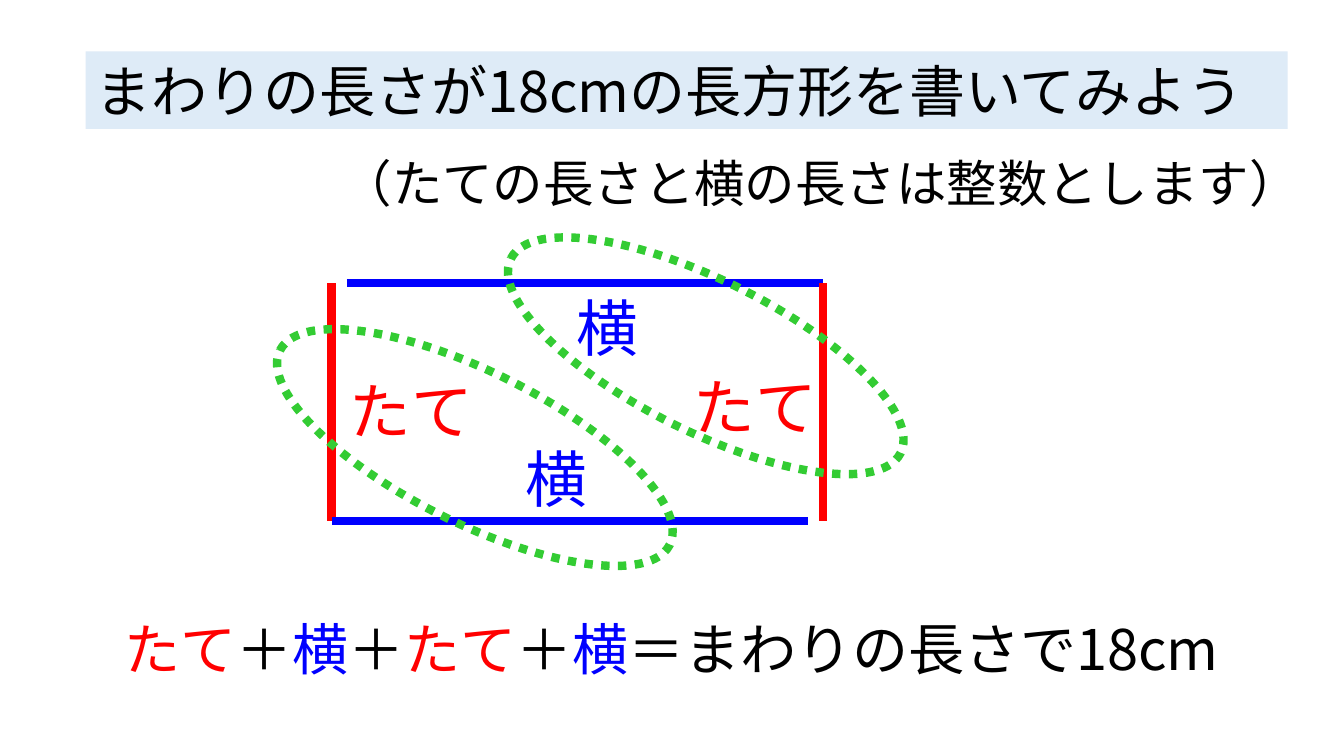
import pptx
import pptx.dml.color
import pptx.enum.dml
import pptx.enum.shapes
import pptx.enum.text
import pptx.oxml
import pptx.oxml.ns
import pptx.util
from pptx.util import Inches

THEME = {
    "font": "Noto Sans CJK JP",
    "text": "000000", "height": "FF0000", "width": "0000FF",
    "pair": "33CC33", "banner": "DEEBF7",
    "title": 40, "note": 36, "label": 44, "formula": 40, "stroke": 6,
}

# box (left, top, width, height), size, spans of (words, colour)
TITLE = ((0.85, 0.51, 11.92, 0.77), "title", [("まわりの長さが18cmの長方形を書いてみよう", "text")])
NOTE = ((3.29, 1.46, 9.79, 0.71), "note", [("（たての長さと横の長さは整数とします）", "text")])
FORMULA = ((1.14, 6.05, 11.33, 0.77), "formula", [
    ("たて", "height"), ("＋", "text"), ("横", "width"), ("＋", "text"),
    ("たて", "height"), ("＋", "text"), ("横", "width"),
    ("＝まわりの長さで18cm", "text"),
])
LABELS = [
    ((3.37, 3.65, 1.44, 0.84), "label", [("たて", "height")]),
    ((6.78, 3.61, 1.44, 0.84), "label", [("たて", "height")]),
    ((5.11, 4.33, 0.82, 0.84), "label", [("横", "width")]),
    ((5.62, 2.83, 0.82, 0.84), "label", [("横", "width")]),
]

# The horizontal sides each stop short of one corner
LEFT, TOP, RIGHT, BOTTOM, GAP = 3.29, 2.81, 8.16, 5.17, 0.15
SIDES = [
    ((LEFT, TOP), (LEFT, BOTTOM), "height"),
    ((LEFT, BOTTOM), (RIGHT - GAP, BOTTOM), "width"),
    ((LEFT + GAP, TOP), (RIGHT, TOP), "width"),
    ((RIGHT, TOP), (RIGHT, BOTTOM), "height"),
]
PAIR_CORNERS = [(4.84, 2.78), (2.55, 3.69)]
PAIR_SIZE = (4.32, 1.5)
PAIR_TILT = 26.5


def colour(name):
    return pptx.dml.color.RGBColor.from_string(THEME[name])


def apply(target, values):
    for name, value in values.items():
        setattr(target, name, value)


def add_text(page, place, size, spans, wrap=False):
    box = page.shapes.add_textbox(*map(Inches, place))
    apply(box.text_frame, {
        "word_wrap": wrap,
        "auto_size": pptx.enum.text.MSO_AUTO_SIZE.SHAPE_TO_FIT_TEXT,
    })
    para = box.text_frame.paragraphs[0]
    for words, tint in spans:
        span = para.add_run()
        span.text = words
        apply(span.font, {"size": pptx.util.Pt(THEME[size]), "name": THEME["font"]})
        span.font.color.rgb = colour(tint)
        east_asian = pptx.oxml.ns.qn("a:ea")
        latin = span.font._element.find(pptx.oxml.ns.qn("a:latin"))
        latin.addnext(latin.makeelement(east_asian, {"typeface": THEME["font"]}))
    return box


def set_stroke(shape, tint):
    shape.line.color.rgb = colour(tint)
    shape.line.width = pptx.util.Pt(THEME["stroke"])


def add_side(page, start, end, tint):
    side = page.shapes.add_connector(
        pptx.enum.shapes.MSO_CONNECTOR.STRAIGHT, *map(Inches, start + end))
    set_stroke(side, tint)
    properties = side._element.spPr
    properties.append(properties.makeelement(pptx.oxml.ns.qn("a:effectLst"), {}))


def add_pair_ring(page, corner):
    """Circle one height and one width with a tilted dotted ellipse."""
    ring = page.shapes.add_shape(
        pptx.enum.shapes.MSO_SHAPE.OVAL, *map(Inches, corner + PAIR_SIZE))
    ring.rotation = PAIR_TILT
    ring.shadow.inherit = False
    ring.fill.background()
    set_stroke(ring, "pair")
    ring.line.dash_style = pptx.enum.dml.MSO_LINE.ROUND_DOT


def main():
    deck = pptx.Presentation()
    apply(deck, {"slide_width": Inches(13.33), "slide_height": Inches(7.5)})
    page = deck.slides.add_slide(deck.slide_layouts[6])

    banner = add_text(page, *TITLE, wrap=True)
    banner.fill.solid()
    banner.fill.fore_color.rgb = colour("banner")
    add_text(page, *NOTE)
    add_text(page, *FORMULA)
    for side in SIDES:
        add_side(page, *side)
    for label in LABELS:
        add_text(page, *label)
    for corner in PAIR_CORNERS:
        add_pair_ring(page, corner)

    deck.save("out.pptx")


if __name__ == "__main__":
    main()
